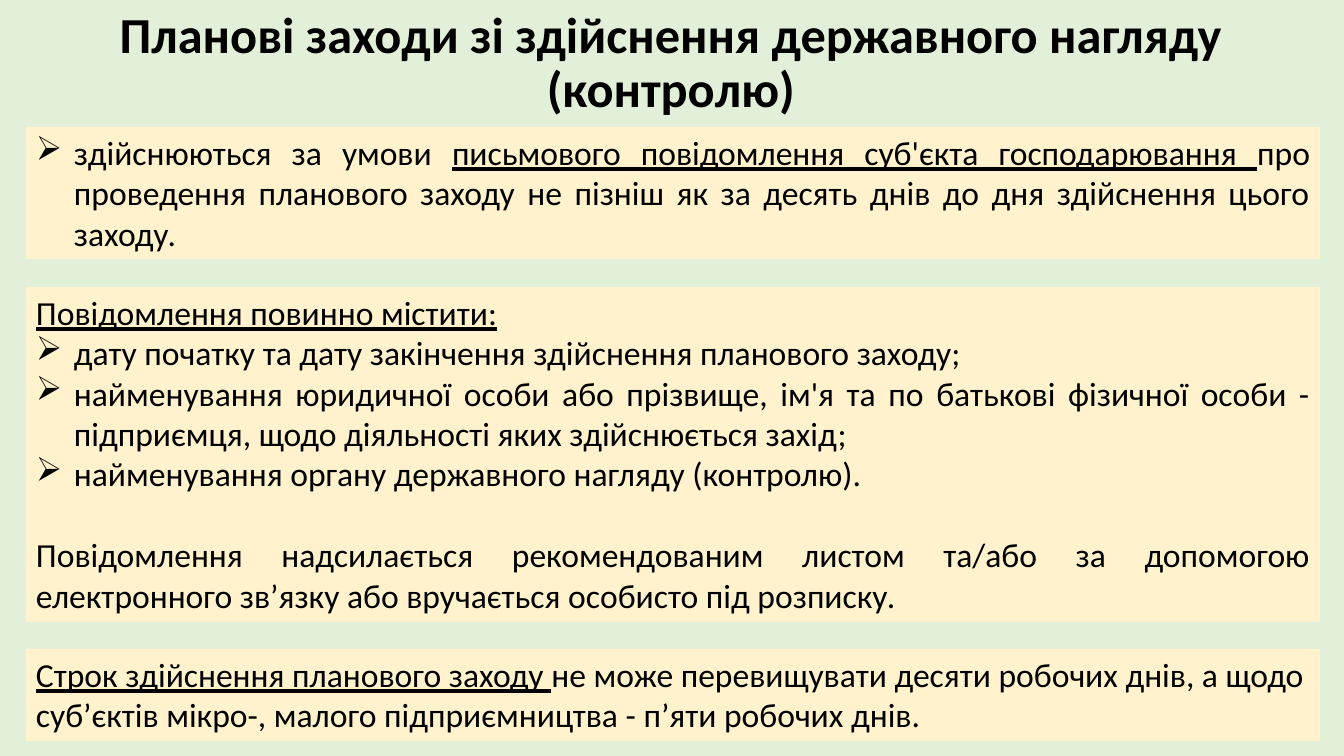
"""Build the slide on planned state supervision measures."""
from lxml import etree
from pptx import Presentation, util as u
from pptx.dml.color import RGBColor
from pptx.enum import shapes, text
from pptx.oxml.ns import qn

GREEN = RGBColor(0xE2, 0xF0, 0xD9)
CREAM = RGBColor(0xFF, 0xF2, 0xCC)
BLACK = RGBColor(0, 0, 0)
FONT = "Calibri"
WIDE, HIGH = 1344, 756
LEFT, SPAN = 26, 1294
INDENT = 38
JUST, FLUSH = text.PP_ALIGN.JUSTIFY, text.PP_ALIGN.LEFT

TITLE = "Планові заходи зі здійснення державного нагляду (контролю)"

# top, height, alignment, paragraphs (bullet, space before in pt, [(words, underlined)])
PANELS = [
    (127, 132, JUST, [
        ("➢", 0, [
            ("здійснюються за умови ", False),
            ("письмового повідомлення суб'єкта господарювання ", True),
            ("про проведення планового заходу не пізніш як за десять днів "
             "до дня здійснення цього заходу.", False)]),
    ]),
    (287, 335, JUST, [
        ("", 0, [("Повідомлення повинно містити:", True)]),
        ("➢", 0, [("дату початку та дату закінчення здійснення "
                   "планового заходу;", False)]),
        ("➢", 0, [("найменування юридичної особи або прізвище, ім'я та по "
                   "батькові фізичної особи - підприємця, щодо діяльності "
                   "яких здійснюється захід;", False)]),
        ("➢", 0, [("найменування органу державного нагляду (контролю).",
                   False)]),
        ("", 29, [("Повідомлення надсилається рекомендованим листом та/або "
                   "за допомогою електронного зв’язку або вручається "
                   "особисто під розписку.", False)]),
    ]),
    (649, 92, FLUSH, [
        ("", 0, [
            ("Строк здійснення планового заходу ", True),
            ("не може перевищувати десяти робочих днів, а щодо суб’єктів "
             "мікро-, малого підприємництва - п’яти робочих днів.", False)]),
    ]),
]


def px(n):
    return u.Emu(round(n * 12192000 / WIDE))


def style(font, size, bold=False):
    font.name, font.size, font.bold = FONT, u.Pt(size), bold
    font.color.rgb = BLACK


def mark(para, sign):
    props = para._p.get_or_add_pPr()
    props.set("marL", str(px(INDENT)))
    props.set("indent", str(-px(INDENT)))
    bullet = etree.Element(qn("a:buChar"), char=sign)
    props.find(qn("a:defRPr")).addprevious(bullet)


def panel(slide, top, high, align, paras):
    box = slide.shapes.add_shape(shapes.MSO_SHAPE.RECTANGLE,
                                 px(LEFT), px(top), px(SPAN), px(high))
    box.shadow.inherit = False
    box.fill.solid()
    box.fill.fore_color.rgb = CREAM
    box.line.fill.background()
    frame = box.text_frame
    frame.word_wrap = True
    frame.vertical_anchor = text.MSO_ANCHOR.TOP
    for i, (sign, before, runs) in enumerate(paras):
        para = frame.add_paragraph() if i else frame.paragraphs[0]
        para.alignment = align
        para.space_before = u.Pt(before)
        style(para.font, 24)
        for words, under in runs:
            run = para.add_run()
            run.text = words
            run.font.underline = under
        if sign:
            mark(para, sign)


def main():
    deck = Presentation()
    deck.slide_width, deck.slide_height = px(WIDE), px(HIGH)
    slide = deck.slides.add_slide(deck.slide_layouts[6])
    back = slide.background.fill
    back.solid()
    back.fore_color.rgb = GREEN

    head = slide.shapes.add_textbox(px(36), px(12), px(1270), px(104))
    frame = head.text_frame
    frame.word_wrap = True
    frame.margin_top = frame.margin_bottom = 0
    frame.vertical_anchor = text.MSO_ANCHOR.MIDDLE
    para = frame.paragraphs[0]
    para.text = TITLE
    para.alignment = text.PP_ALIGN.CENTER
    para.line_spacing = 0.9
    style(para.font, 36, True)

    for item in PANELS:
        panel(slide, *item)
    deck.save("out.pptx")


if __name__ == "__main__":
    main()
